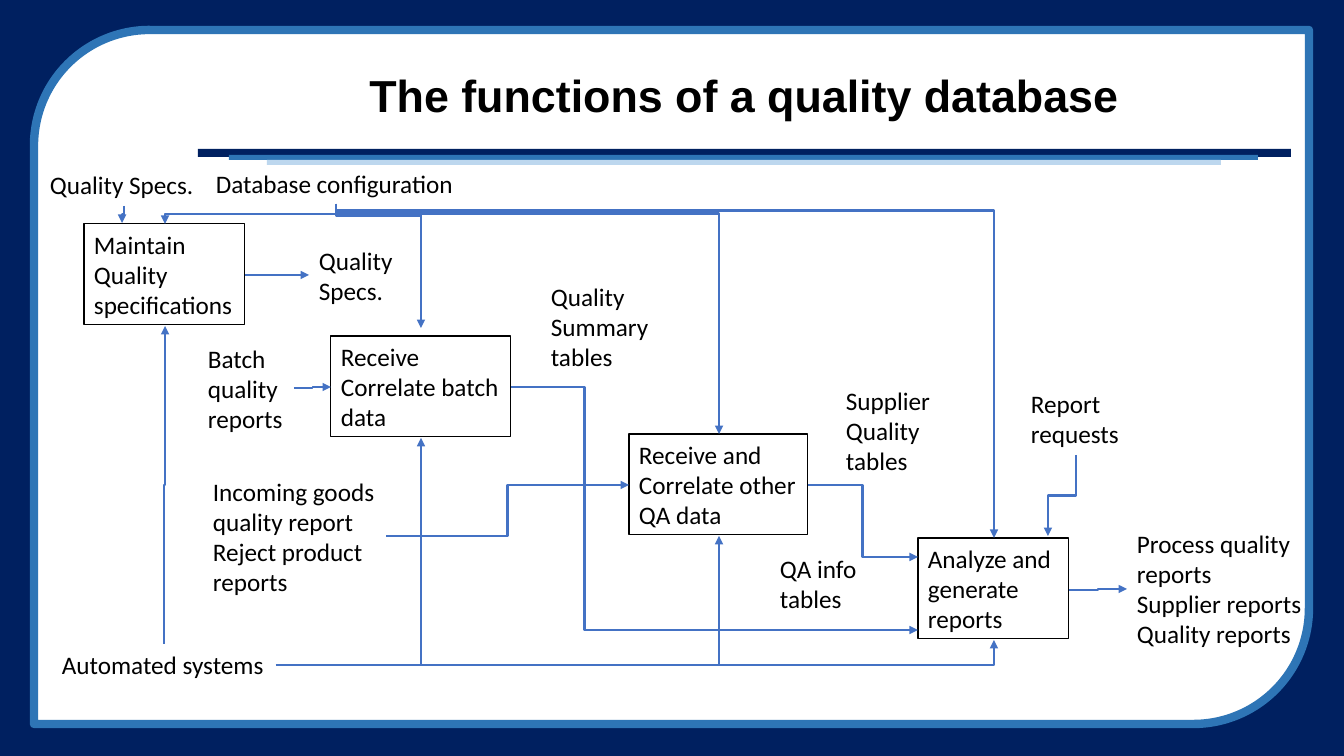
import pptx
import pptx.util
import pptx.dml.color
import pptx.enum.shapes
import pptx.enum.text
import pptx.oxml
import pptx.oxml.ns
from lxml import etree

PX = 914400 / 100.8
NAVY = pptx.dml.color.RGBColor(0x00, 0x20, 0x60)
BLUE = pptx.dml.color.RGBColor(0x2E, 0x75, 0xB6)
PALE_BLUE = pptx.dml.color.RGBColor(0xBD, 0xD7, 0xEE)
FLOW_BLUE = pptx.dml.color.RGBColor(0x44, 0x72, 0xC4)
WHITE = pptx.dml.color.RGBColor(0xFF, 0xFF, 0xFF)
BLACK = pptx.dml.color.RGBColor(0x00, 0x00, 0x00)

MSO_SHAPE = pptx.enum.shapes.MSO_SHAPE
ELBOW = pptx.enum.shapes.MSO_CONNECTOR.ELBOW
PP_ALIGN = pptx.enum.text.PP_ALIGN
qn = pptx.oxml.ns.qn

deck = pptx.Presentation()
deck.slide_width = round(1344 * PX)
deck.slide_height = round(756 * PX)
slide = deck.slides.add_slide(deck.slide_layouts[6])


def write_lines(frame, lines, font_name, size, bold, align):
    """Fill a text frame with one paragraph for each line."""
    for index, line in enumerate(lines):
        paragraph = frame.paragraphs[0] if index == 0 else frame.add_paragraph()
        paragraph.alignment = align
        run = paragraph.add_run()
        run.text = line
        run.font.name = font_name
        run.font.size = pptx.util.Pt(size)
        run.font.bold = bold
        run.font.color.rgb = BLACK


def add_flow(start, end, route, bend=0.5, weight=2):
    """Draw an elbow arrow; route is "across", "down" (vertical first) or "corner"."""
    (x1, y1), (x2, y2) = start, end
    quarter = 0
    if route == "down":
        # A quarter turn about the centre swaps the two extents.
        dx, dy = x2 - x1, y2 - y1
        quarter = 1 if dx * dy <= 0 else 3
        sign = 2 - quarter
        mid_x, mid_y = (x1 + x2) / 2, (y1 + y2) / 2
        x1, x2 = mid_x - sign * dy / 2, mid_x + sign * dy / 2
        y1, y2 = mid_y + sign * dx / 2, mid_y - sign * dx / 2
    flow = slide.shapes.add_connector(ELBOW, *(round(v * PX) for v in (x1, y1, x2, y2)))
    flow.line.color.rgb = FLOW_BLUE
    flow.line.width = pptx.util.Pt(weight)
    properties = flow._element.spPr
    if quarter:
        properties.find(qn("a:xfrm")).set("rot", str(quarter * 5400000))
    geometry = properties.find(qn("a:prstGeom"))
    if route == "corner":
        geometry.set("prst", "bentConnector2")
    else:
        guide = etree.SubElement(geometry.find(qn("a:avLst")), qn("a:gd"))
        guide.set("name", "adj1")
        guide.set("fmla", f"val {round(bend * 100000)}")
    etree.SubElement(properties.find(qn("a:ln")), qn("a:tailEnd")).set("type", "triangle")
    etree.SubElement(properties, qn("a:effectLst"))


# Frame and title rules
for kind, left, top, width, height, colour, edge in [
    (MSO_SHAPE.RECTANGLE, 0, 0, 1344, 756, NAVY, None),
    (MSO_SHAPE.ROUND_2_DIAG_RECTANGLE, 34, 30, 1275, 694, WHITE, BLUE),
    (MSO_SHAPE.RECTANGLE, 198, 149, 1093, 8, NAVY, None),
    (MSO_SHAPE.RECTANGLE, 229, 155, 1029, 5, BLUE, None),
    (MSO_SHAPE.RECTANGLE, 267, 160, 954, 5, PALE_BLUE, None),
]:
    panel = slide.shapes.add_shape(kind, *(round(v * PX) for v in (left, top, width, height)))
    panel.shadow.inherit = False
    panel.fill.solid()
    panel.fill.fore_color.rgb = colour
    if edge is None:
        panel.line.fill.background()
    else:
        panel.line.color.rgb = edge
        panel.line.width = pptx.util.Pt(6)

title = slide.shapes.add_textbox(*(round(v * PX) for v in (198, 49, 1093, 98)))
title.text_frame.word_wrap = True
title.text_frame.vertical_anchor = pptx.enum.text.MSO_ANCHOR.MIDDLE
write_lines(title.text_frame, ["The functions of a quality database"], "Arial", 32, True, PP_ALIGN.CENTER)
title.text_frame.paragraphs[0].line_spacing = 0.9

# Process steps are outlined, the data names around them are not
for is_step, left, top, width, lines in [
    (True, 84, 224, 161, ["Maintain", "Quality", "specifications"]),
    (True, 331, 336, 180, ["Receive", "Correlate batch", "data"]),
    (True, 629, 434, 179, ["Receive and", "Correlate other", "QA data"]),
    (True, 918, 538, 151, ["Analyze and", "generate", "reports"]),
    (False, 52, 644, 224, ["Automated systems"]),
    (False, 309, 240, 95, ["Quality", "Specs."]),
    (False, 541, 276, 119, ["Quality", "Summary", "tables"]),
    (False, 836, 380, 106, ["Supplier", "Quality", "tables"]),
    (False, 1127, 523, 186, ["Process quality", "reports", "Supplier reports", "Quality reports"]),
    (False, 203, 471, 183, ["Incoming goods", "quality report", "Reject product", "reports"]),
    (False, 198, 338, 97, ["Batch", "quality", "reports"]),
    (False, 770, 548, 98, ["QA info", "tables"]),
    (False, 206, 163, 260, ["Database configuration"]),
    (False, 40, 164, 165, ["Quality Specs."]),
    (False, 1021, 383, 109, ["Report", "requests"]),
]:
    height = 10 + 61 * len(lines) // 2
    place = [round(v * PX) for v in (left, top, width, height)]
    if is_step:
        block = slide.shapes.add_shape(MSO_SHAPE.RECTANGLE, *place)
        block.shadow.inherit = False
        block.fill.background()
        block.line.color.rgb = BLACK
        block.line.width = pptx.util.Pt(0.75)
    else:
        block = slide.shapes.add_textbox(*place)
    block.text_frame.word_wrap = False
    block.text_frame.auto_size = pptx.enum.text.MSO_AUTO_SIZE.SHAPE_TO_FIT_TEXT
    block.text_frame.vertical_anchor = pptx.enum.text.MSO_ANCHOR.TOP
    write_lines(block.text_frame, lines, "Calibri", 18, False, PP_ALIGN.LEFT)

# Data passing between steps
add_flow((294, 388), (331, 387), "across", weight=1)
add_flow((386, 536), (629, 485), "across")
add_flow((245, 275), (309, 275), "across", weight=1)
add_flow((511, 387), (918, 630), "across", bend=0.18)
add_flow((808, 485), (918, 557), "across")
add_flow((1069, 590), (1127, 589), "across")
add_flow((124, 206), (122, 223), "down")
add_flow((1076, 455), (1048, 536), "down")

# Database configuration reaches every step from above
for end, bend in [((165, 224), 0.5), ((421, 328), 0.09), ((719, 434), 0.04), ((994, 538), 0.02)]:
    add_flow((336, 204), end, "down", bend)

# Automated systems reach every step from below
add_flow((164, 644), (165, 326), "down")
for end in [(421, 438), (719, 536), (994, 640)]:
    add_flow((276, 665), end, "corner")

deck.save("out.pptx")
